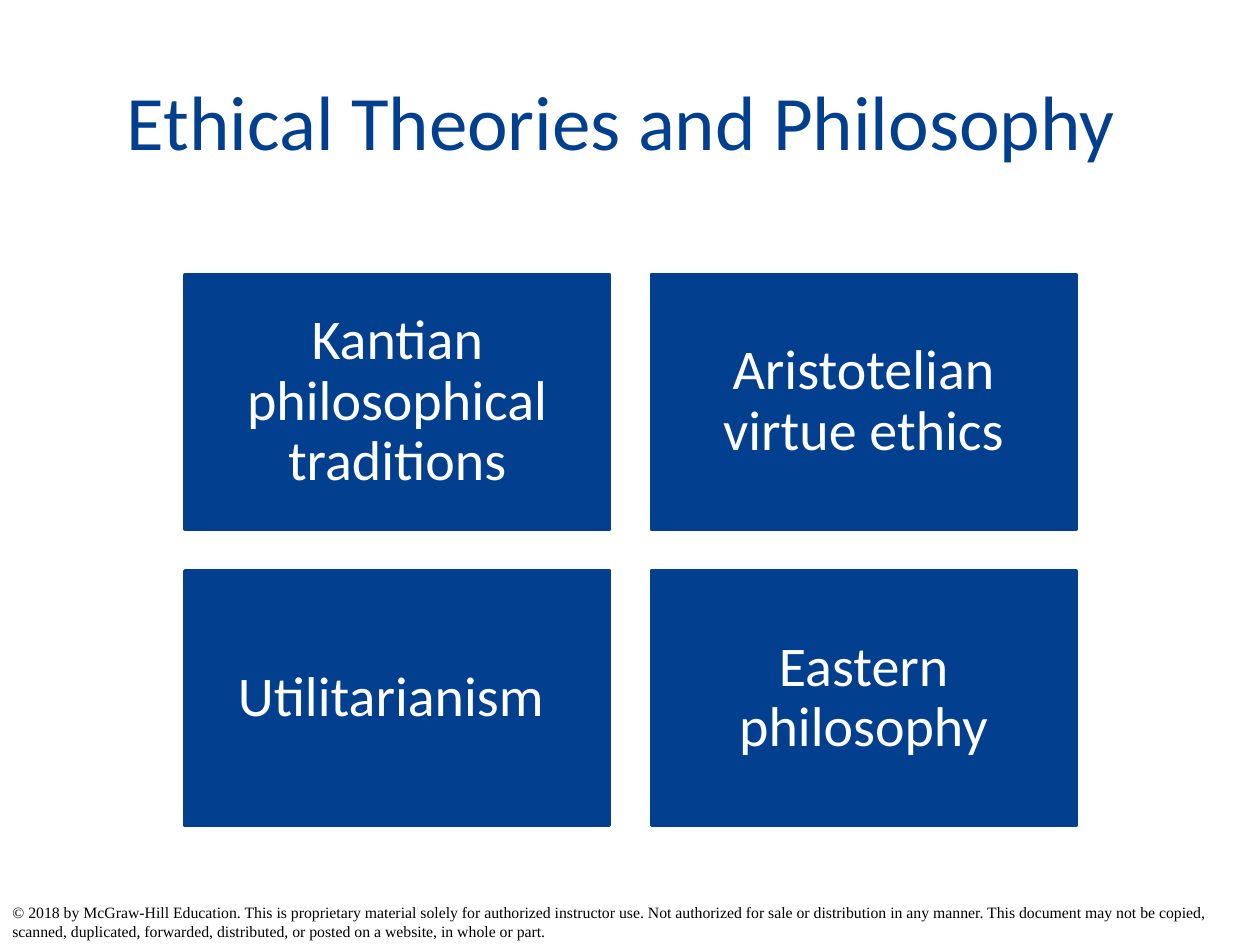
"""Build a slide with four ethical theories in a two-by-two grid."""
import pptx
import pptx.dml.color
import pptx.enum.shapes
import pptx.enum.text
import pptx.util

Cm = pptx.util.Cm
Pt = pptx.util.Pt
Align = pptx.enum.text.PP_ALIGN
Anchor = pptx.enum.text.MSO_ANCHOR

TITLE = "Ethical Theories and Philosophy "
CARDS = [
    "Kantian philosophical traditions",
    "Aristotelian virtue ethics",
    "Utilitarianism ",
    "Eastern philosophy",
]
NOTICE = (
    "© 2018 by McGraw-Hill Education. This is proprietary material solely for "
    "authorized instructor use. Not authorized for sale or distribution in any "
    "manner. This document may not be copied, scanned, duplicated, forwarded, "
    "distributed, or posted on a website, in whole or part."
)

THEME = {
    "blue": "033F8F", "white": "FFFFFF", "black": "000000",
    "sans": "Calibri", "serif": "Times New Roman",
    "title": 44, "card": 32, "notice": 9,
}
COLS = 2
LEFT, TOP = 3.73, 5.54
WIDTH, HEIGHT, GAP = 8.56, 5.13, 0.84


def color(name):
    return pptx.dml.color.RGBColor.from_string(THEME[name])


def write(shape, text, size, ink, face="sans", align=Align.LEFT,
          anchor=Anchor.TOP, inset=None, spacing=None):
    frame = shape.text_frame
    frame.word_wrap = True
    frame.auto_size = pptx.enum.text.MSO_AUTO_SIZE.NONE
    frame.vertical_anchor = anchor
    if inset is not None:
        frame.margin_left = frame.margin_right = Cm(inset)
        frame.margin_top = frame.margin_bottom = Cm(inset)
    frame.text = text
    para = frame.paragraphs[0]
    para.alignment = align
    para.line_spacing = spacing
    font = para.runs[0].font
    font.name = THEME[face]
    font.size = Pt(THEME[size])
    font.color.rgb = color(ink)


def place(shape, left, top, width, height):
    shape.left, shape.top = Cm(left), Cm(top)
    shape.width, shape.height = Cm(width), Cm(height)


def add_card(slide, index, text):
    row, col = divmod(index, COLS)
    card = slide.shapes.add_shape(
        pptx.enum.shapes.MSO_SHAPE.RECTANGLE,
        Cm(LEFT + col * (WIDTH + GAP)), Cm(TOP + row * (HEIGHT + GAP)),
        Cm(WIDTH), Cm(HEIGHT))
    card.shadow.inherit = False
    card.fill.solid()
    card.fill.fore_color.rgb = color("blue")
    card.line.color.rgb = color("blue")
    card.line.width = Pt(2)
    write(card, text, "card", "white", align=Align.CENTER,
          anchor=Anchor.MIDDLE, inset=0.33, spacing=0.9)


def main():
    deck = pptx.Presentation()
    deck.slide_width, deck.slide_height = Cm(25.4), Cm(19.05)
    slide = deck.slides.add_slide(deck.slide_layouts[5])

    title = slide.shapes.title
    place(title, 1.27, 1.35, 22.86, 3.18)
    write(title, TITLE, "title", "blue", align=Align.CENTER)

    for index, text in enumerate(CARDS):
        add_card(slide, index, text)

    notice = slide.shapes.add_textbox(Cm(0), Cm(18.08), Cm(25.4), Cm(0.48))
    write(notice, NOTICE, "notice", "black", face="serif")
    deck.save("out.pptx")


if __name__ == "__main__":
    main()
